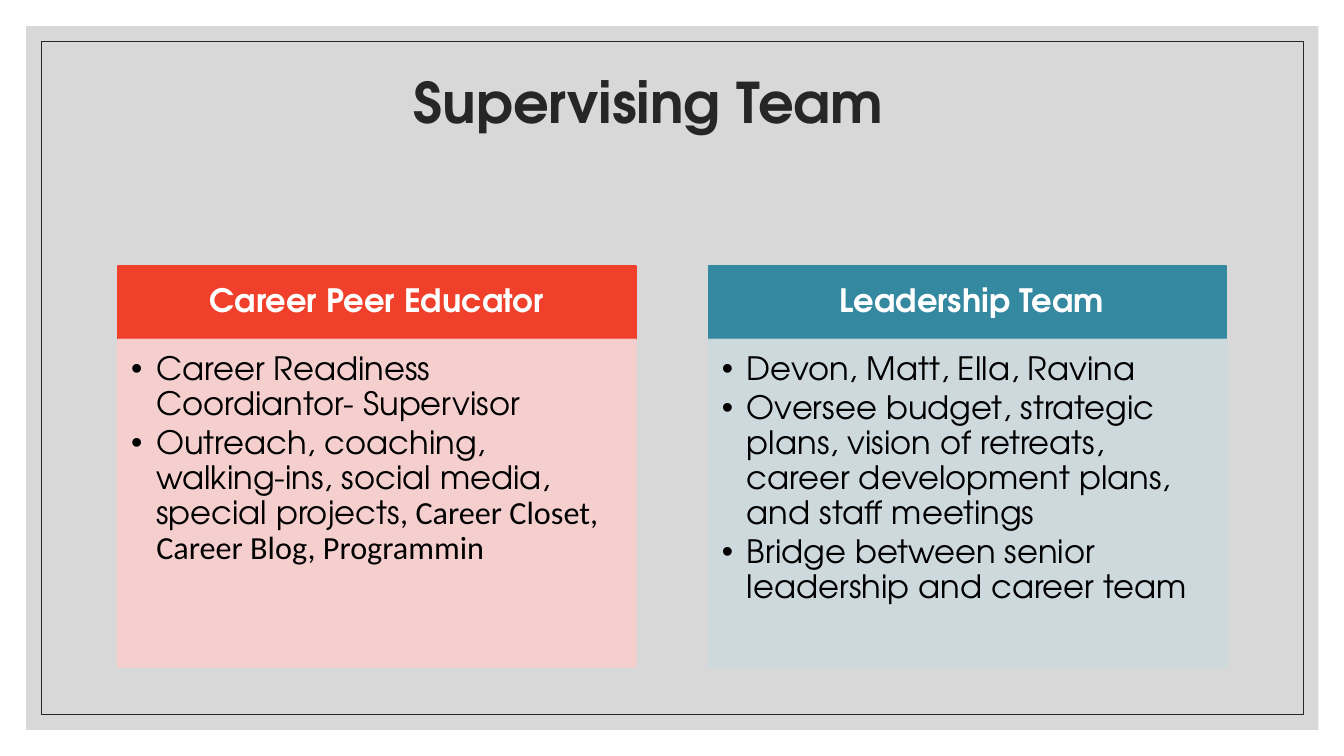
"""Builds the Supervising Team slide with two headed lists side by side."""
import lxml.etree
import pptx
import pptx.dml.color
import pptx.enum.shapes
import pptx.enum.text
import pptx.oxml.ns
import pptx.util

Pt = pptx.util.Pt
ANCHOR = pptx.enum.text.MSO_ANCHOR
ALIGN = pptx.enum.text.PP_ALIGN
FONT = "TeX Gyre Adventor"
COLUMN_LEFT, COLUMN_STEP, COLUMN_WIDTH = 84.24, 421.92, 370.1
HEADING_TOP, HEADING_HEIGHT = 190.1, 52
LIST_TOP, LIST_HEIGHT = 242.4, 234
COLUMNS = [
    ("Career Peer Educator", "F03F2B", "F9CFCD", [
        [("Career Readiness Coordiantor- Supervisor", FONT)],
        [("Outreach, coaching, walking-ins, social media, special projects", FONT),
         (", Career Closet, Career Blog, Programmin", "Calibri")],
    ]),
    (" Leadership Team", "3488A0", "CEDADF", [
        [("Devon, Matt, Ella, Ravina", FONT)],
        [("Oversee budget, strategic plans, vision of retreats, "
          "career development plans, and staff meetings", FONT)],
        [("Bridge between senior leadership and career team", FONT)],
    ]),
]


def paint(color_format, color, opacity=100):
    color_format.solid()
    color_format.fore_color.rgb = pptx.dml.color.RGBColor.from_string(color)
    if opacity < 100:
        solid = color_format._xPr.find(pptx.oxml.ns.qn("a:solidFill"))
        lxml.etree.SubElement(solid[0], pptx.oxml.ns.qn("a:alpha"), val=str(opacity * 1000))


def outline(shape, color, width, opacity=100):
    shape.line.width = Pt(width)
    paint(shape.line.fill, color, opacity)


def place(shape, left, top, width, height):
    shape.left, shape.top = Pt(left), Pt(top)
    shape.width, shape.height = Pt(width), Pt(height)


def write(shape, paragraphs, size, color, bold=False, align=ALIGN.LEFT,
          anchor=ANCHOR.TOP, insets=(7.2, 3.6, 7.2, 3.6), after=0, indent=0):
    frame = shape.text_frame
    frame.word_wrap = True
    frame.auto_size = pptx.enum.text.MSO_AUTO_SIZE.NONE
    frame.vertical_anchor = anchor
    frame.margin_left, frame.margin_top, frame.margin_right, frame.margin_bottom = map(Pt, insets)
    for index, runs in enumerate(paragraphs):
        paragraph = frame.add_paragraph() if index else frame.paragraphs[0]
        paragraph.alignment = align
        paragraph.line_spacing = 0.9
        paragraph.space_before, paragraph.space_after = Pt(0), Pt(after)
        properties = paragraph._p.get_or_add_pPr()
        properties.set("marL", str(Pt(indent)))
        properties.set("indent", str(-Pt(indent)))
        for words, font_name in runs:
            run = paragraph.add_run()
            run.text = words
            run.font.name, run.font.size, run.font.bold = font_name, Pt(size), bold
            paint(run.font.fill, color)


def add_backdrop(slide, position, left, top, width, height):
    backdrop = slide.shapes.add_shape(
        pptx.enum.shapes.MSO_SHAPE.RECTANGLE, Pt(left), Pt(top), Pt(width), Pt(height))
    backdrop.shadow.inherit = False
    slide.shapes._spTree.insert(2 + position, backdrop._element)
    return backdrop


def fill_column(heading, listing, left, title, strong, pale, items):
    place(heading, left, HEADING_TOP, COLUMN_WIDTH, HEADING_HEIGHT)
    paint(heading.fill, strong)
    outline(heading, strong, 1)
    write(heading, [[(title, FONT)]], 23, "FFFFFF", bold=True, align=ALIGN.CENTER,
          anchor=ANCHOR.MIDDLE, insets=(13, 7.2, 13, 7.2))
    place(listing, left, LIST_TOP, COLUMN_WIDTH, LIST_HEIGHT)
    paint(listing.fill, pale, 90)
    outline(listing, pale, 1, 90)
    write(listing, items, 23, "000000", insets=(9.4, 9.4, 13, 14.4), after=3.45, indent=18)


def main():
    deck = pptx.Presentation()
    deck.slide_width, deck.slide_height = Pt(960), Pt(540)
    slide = deck.slides.add_slide(deck.slide_layouts.get_by_name("Comparison"))
    panel = add_backdrop(slide, 0, 18.7, 18.7, 923, 502.6)
    paint(panel.fill, "BFBFBF", 60)
    panel.line.fill.background()
    border = add_backdrop(slide, 1, 29.5, 29.5, 901.4, 481)
    border.fill.background()
    outline(border, "262626", 0.5)

    title, *column_parts = slide.placeholders
    place(title, 80.6, 50.4, 765.4, 118)
    write(title, [[("Supervising Team", FONT)]], 40, "262626", bold=True, align=ALIGN.CENTER)
    for index, column in enumerate(COLUMNS):
        heading, listing = column_parts[2 * index:2 * index + 2]
        fill_column(heading, listing, COLUMN_LEFT + index * COLUMN_STEP, *column)
    deck.save("out.pptx")


if __name__ == "__main__":
    main()
